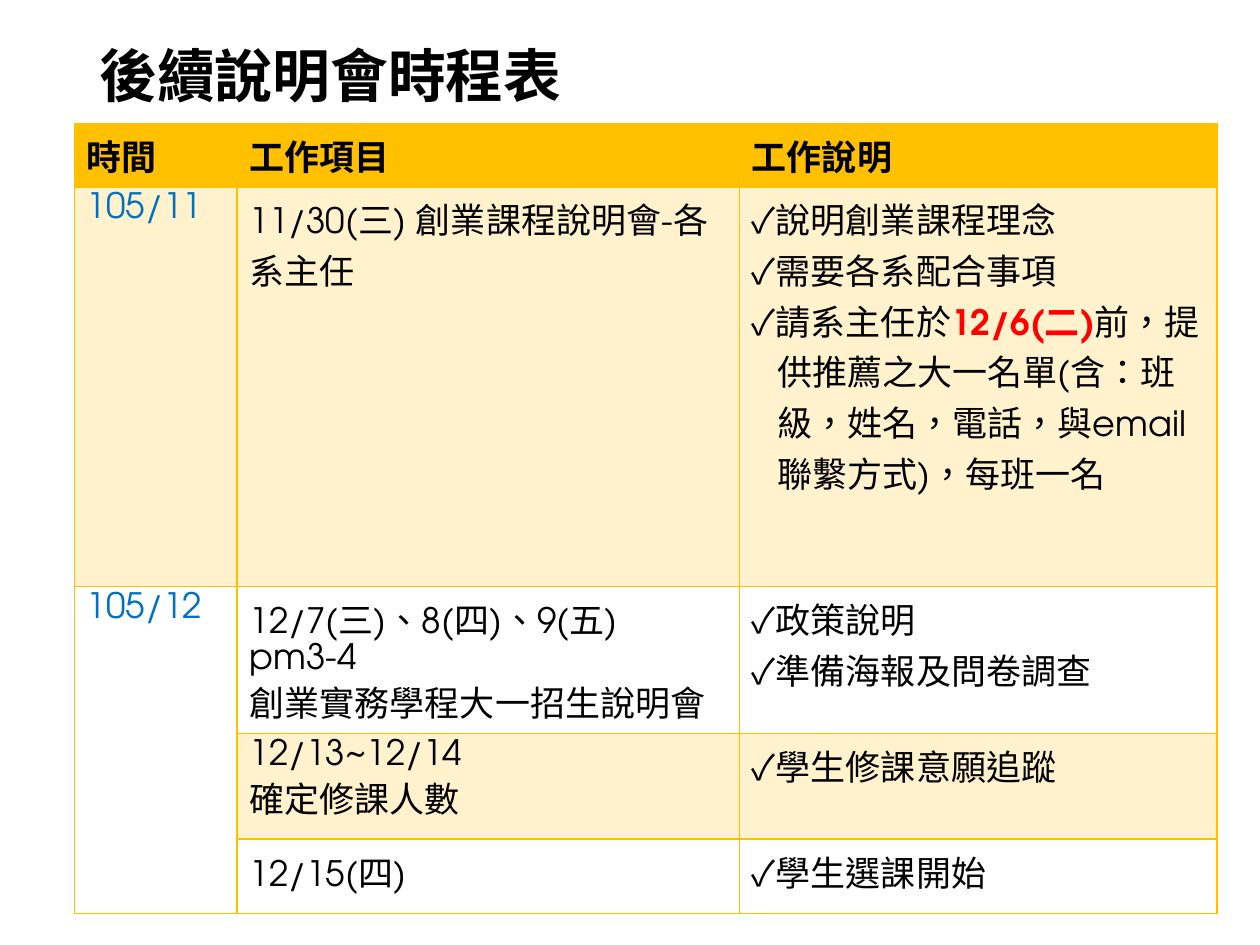
from dataclasses import dataclass

from lxml import etree
from pptx import Presentation
from pptx.dml.color import RGBColor
from pptx.enum import lang, text
from pptx.oxml import ns
from pptx.util import Pt

FONT = "TeX Gyre Adventor"
BLACK = RGBColor(0x00, 0x00, 0x00)
BLUE = RGBColor(0x00, 0x70, 0xC0)
RED = RGBColor(0xFF, 0x00, 0x00)
GOLD = RGBColor(0xFF, 0xC0, 0x00)
COL_WIDTHS = (93, 287, 273)
HANGING = 14.4


@dataclass(frozen=True)
class Run:
    text: str
    color: RGBColor = BLACK
    bold: bool = False


@dataclass(frozen=True)
class Para:
    runs: tuple[Run, ...]
    indent: float = 0


@dataclass(frozen=True)
class Row:
    height: float
    cells: tuple[tuple[Para, ...], ...]
    opacity: int = 0
    rule: float = 1


def lines(*texts: str, color: RGBColor = BLACK, bold: bool = False) -> tuple[Para, ...]:
    return tuple(Para((Run(t, color, bold),)) for t in texts)


DEADLINE = Para(
    (
        Run("✓請系主任於"),
        Run("12/6(二)", RED, True),
        Run("前，提供推薦之大一名單(含：班級，姓名，電話，與email聯繫方式)，每班一名"),
    ),
    HANGING,
)

ROWS = (
    Row(36, tuple(lines(t, bold=True) for t in ("時間", "工作項目", "工作說明")), 100, 2),
    Row(
        228.5,
        (
            lines("105/11", color=BLUE),
            lines("11/30(三) 創業課程說明會-各系主任"),
            lines("✓說明創業課程理念", "✓需要各系配合事項") + (DEADLINE,),
        ),
        20,
    ),
    Row(
        84,
        (
            lines("105/12", color=BLUE),
            lines("12/7(三)、8(四)、9(五)", "pm3-4", "創業實務學程大一招生說明會"),
            lines("✓政策說明", "✓準備海報及問卷調查"),
        ),
    ),
    Row(60.5, ((), lines("12/13~12/14", "確定修課人數"), lines("✓學生修課意願追蹤")), 20),
    Row(42.5, ((), lines("12/15(四)"), lines("✓學生選課開始"))),
)


def write(tf, paras: tuple[Para, ...], size: float) -> None:
    for i, para in enumerate(paras):
        p = tf.add_paragraph() if i else tf.paragraphs[0]
        if para.indent:
            pPr = p._p.get_or_add_pPr()
            pPr.set("marL", str(Pt(para.indent)))
            pPr.set("indent", str(-Pt(para.indent)))
        for run in para.runs:
            r = p.add_run()
            r.text = run.text
            r.font.name = FONT
            r.font.size = Pt(size)
            r.font.bold = run.bold
            r.font.color.rgb = run.color
            r.font.language_id = lang.MSO_LANGUAGE_ID.TRADITIONAL_CHINESE


def fill_cell(cell, opacity: int) -> None:
    if not opacity:
        cell.fill.background()
        return
    cell.fill.solid()
    cell.fill.fore_color.rgb = GOLD
    if opacity < 100:
        clr = cell._tc.tcPr.find(".//" + ns.qn("a:srgbClr"))
        etree.SubElement(clr, ns.qn("a:alpha"), val=str(opacity * 1000))


def border_cell(cell, top: float, bottom: float) -> None:
    tcPr = cell._tc.get_or_add_tcPr()
    sides = (("lnL", 1), ("lnR", 1), ("lnT", top), ("lnB", bottom))
    for i, (side, width) in enumerate(sides):
        ln = etree.Element(ns.qn(f"a:{side}"), w=str(Pt(width)))
        fill = etree.SubElement(ln, ns.qn("a:solidFill"))
        etree.SubElement(fill, ns.qn("a:srgbClr"), val=str(GOLD))
        tcPr.insert(i, ln)


def add_title(s, title: str) -> None:
    tf = s.shapes.add_textbox(Pt(49.7), Pt(20.9), Pt(620.6), Pt(48.2)).text_frame
    tf.word_wrap = True
    tf.vertical_anchor = text.MSO_ANCHOR.MIDDLE
    write(tf, lines(title, bold=True), 33)
    tf.paragraphs[0].line_spacing = 0.9


def add_schedule(s, rows: tuple[Row, ...]) -> None:
    height = sum(row.height for row in rows)
    tbl = s.shapes.add_table(
        len(rows), len(COL_WIDTHS), Pt(42.5), Pt(70.6), Pt(sum(COL_WIDTHS)), Pt(height)
    ).table
    tbl.first_row = tbl.horz_banding = False
    for col, width in zip(tbl.columns, COL_WIDTHS):
        col.width = Pt(width)
    top = 1
    for i, row in enumerate(rows):
        tbl.rows[i].height = Pt(row.height)
        for j, paras in enumerate(row.cells):
            cell = tbl.cell(i, j)
            write(cell.text_frame, paras, 20)
            fill_cell(cell, row.opacity if paras else 0)
            border_cell(cell, top, row.rule)
        top = row.rule
    tbl.cell(2, 0).merge(tbl.cell(len(rows) - 1, 0))


def main() -> None:
    prs = Presentation()
    prs.slide_width, prs.slide_height = Pt(720), Pt(540)
    s = prs.slides.add_slide(prs.slide_layouts[6])
    add_title(s, "後續說明會時程表")
    add_schedule(s, ROWS)
    prs.save("out.pptx")


if __name__ == "__main__":
    main()
